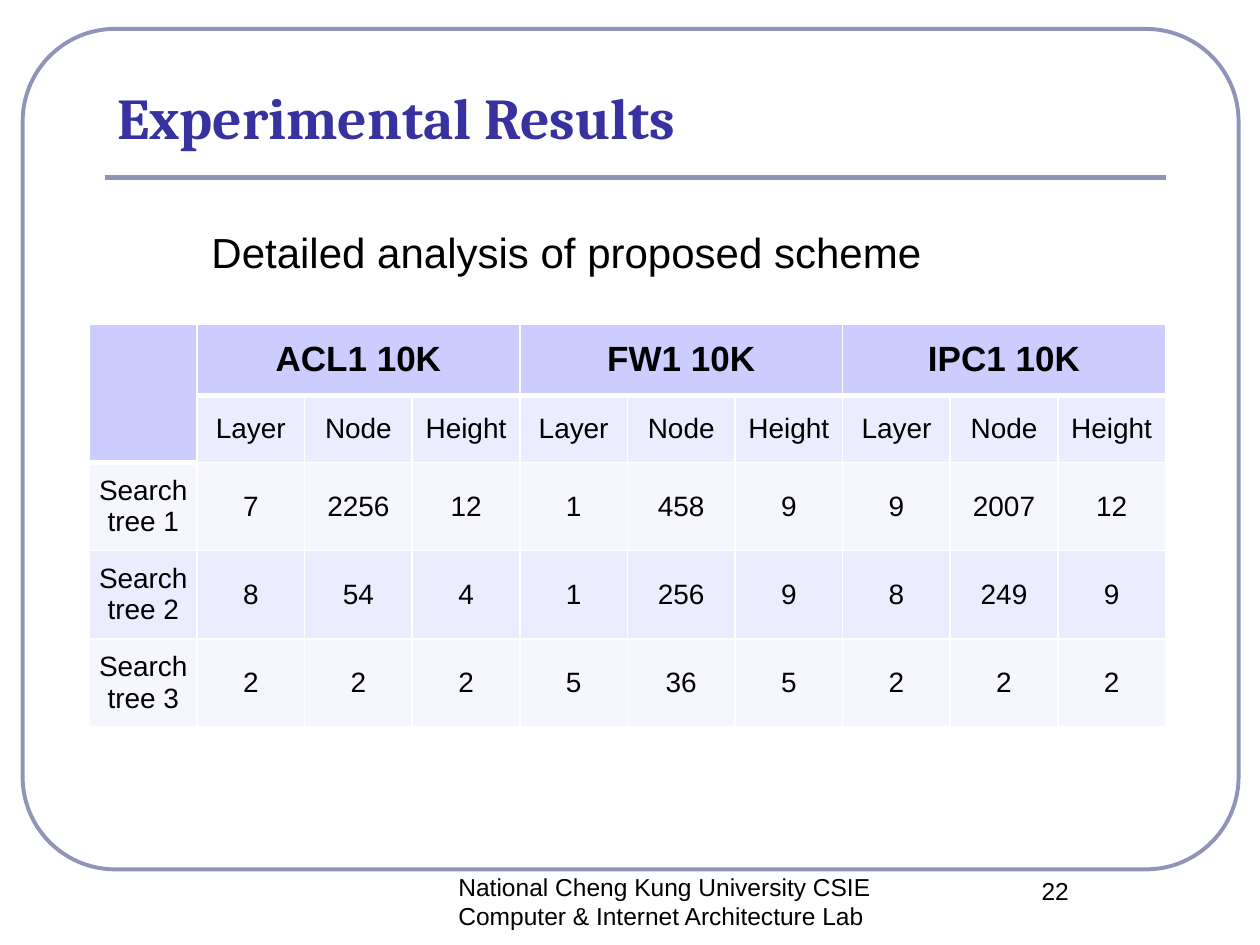
import lxml.etree
import pptx
import pptx.dml.color
import pptx.enum.shapes
import pptx.enum.text
import pptx.oxml.ns
import pptx.util
from pptx.util import Inches, Pt

COLORS = {
    "frame": "9094B8", "title": "3732A0", "text": "000000", "border": "FFFFFF",
    "header": "CCCCFF", "dark band": "ECECFF", "light band": "F6F6FF",
}
TITLE = "Experimental Results"
TEXTS = [  # text, left, top, width, height, size, centred
    ("National Cheng Kung University CSIE Computer & Internet Architecture Lab ",
     3.11, 6.87, 4.33, 0.5, 14, True),
    ("22", 7.5, 6.9, 1.75, 0.5, 14, True),
    ("Detailed analysis of proposed scheme", 1.58, 1.75, 5.92, 0.55, 24, False),
]
RULE_SETS = ["ACL1 10K", "FW1 10K", "IPC1 10K"]
MEASURES = ["Layer", "Node", "Height"]
TREES = [
    ("Search tree 1", 7, 2256, 12, 1, 458, 9, 9, 2007, 12),
    ("Search tree 2", 8, 54, 4, 1, 256, 9, 8, 249, 9),
    ("Search tree 3", 2, 2, 2, 5, 36, 5, 2, 2, 2),
]
TABLE_LEFT, TABLE_TOP, TABLE_WIDTH = 0.71, 2.57, 8.54
ROW_HEIGHTS = [0.57, 0.53, 0.7, 0.7, 0.7]
CENTER = pptx.enum.text.PP_ALIGN.CENTER
LEFT = pptx.enum.text.PP_ALIGN.LEFT


def color(name):
    return pptx.dml.color.RGBColor.from_string(COLORS[name])


def style_paragraph(para, size, align, font="Arial", color_name="text", bold=False):
    para.alignment = align
    para.font.name = font
    para.font.size = Pt(size)
    para.font.bold = bold
    para.font.color.rgb = color(color_name)


def add_frame(slide):
    frame = slide.shapes.add_shape(
        pptx.enum.shapes.MSO_SHAPE.ROUNDED_RECTANGLE,
        Inches(0.18), Inches(0.23), Inches(9.65), Inches(6.67))
    frame.adjustments[0] = 0.11
    frame.shadow.inherit = False
    frame.fill.background()
    frame.line.color.rgb = color("frame")
    frame.line.width = Pt(2.25)

    rule = slide.shapes.add_connector(
        pptx.enum.shapes.MSO_CONNECTOR.STRAIGHT,
        Inches(0.83), Inches(1.41), Inches(9.25), Inches(1.41))
    rule.line.color.rgb = color("frame")
    rule.line.width = Pt(3)
    lxml.etree.SubElement(rule.element.spPr, pptx.oxml.ns.qn("a:effectLst"))


def add_title(slide):
    title = slide.shapes.title
    title.left, title.top = Inches(0.83), Inches(0.6)
    title.width, title.height = Inches(8.42), Inches(0.65)
    title.text_frame.text = TITLE
    title.text_frame.auto_size = pptx.enum.text.MSO_AUTO_SIZE.NONE
    title.text_frame.vertical_anchor = pptx.enum.text.MSO_ANCHOR.BOTTOM
    style_paragraph(title.text_frame.paragraphs[0], 33, LEFT, "Cambria", "title", True)


def add_text(slide, text, left, top, width, height, size, centred):
    box = slide.shapes.add_textbox(
        Inches(left), Inches(top), Inches(width), Inches(height))
    box.text_frame.word_wrap = True
    box.text_frame.text = text
    style_paragraph(box.text_frame.paragraphs[0], size, CENTER if centred else LEFT)


def set_borders(cell, bottom_width):
    """Draw the cell's edges; call before the fill, which must follow them in the XML."""
    qn = pptx.oxml.ns.qn
    properties = cell._tc.get_or_add_tcPr()
    for side, width in (("L", 1), ("R", 1), ("T", 1), ("B", bottom_width)):
        line = lxml.etree.SubElement(properties, qn(f"a:ln{side}"), w=str(Pt(width)))
        fill = lxml.etree.SubElement(line, qn("a:solidFill"))
        lxml.etree.SubElement(fill, qn("a:srgbClr"), val=COLORS["border"])


def add_results(slide):
    header = [""]
    for rule_set in RULE_SETS:
        header += [rule_set] + [""] * (len(MEASURES) - 1)
    rows = [header, [""] + MEASURES * len(RULE_SETS), *TREES]
    table = slide.shapes.add_table(
        len(rows), len(header), Inches(TABLE_LEFT), Inches(TABLE_TOP),
        Inches(TABLE_WIDTH), Inches(sum(ROW_HEIGHTS))).table
    for column in table.columns:
        column.width = Inches(TABLE_WIDTH / len(header))
    for row, height in zip(table.rows, ROW_HEIGHTS):
        row.height = Inches(height)

    for row_index, values in enumerate(rows):
        for column_index, value in enumerate(values):
            cell = table.cell(row_index, column_index)
            is_header = row_index == 0 or (row_index == 1 and column_index == 0)
            band = "dark band" if row_index % 2 else "light band"
            set_borders(cell, 3 if is_header else 1)
            cell.fill.solid()
            cell.fill.fore_color.rgb = color("header" if is_header else band)
            cell.vertical_anchor = pptx.enum.text.MSO_ANCHOR.MIDDLE
            if not is_header:
                cell.margin_left = cell.margin_right = 0
                cell.margin_top = cell.margin_bottom = 0
            cell.text = str(value)
            style_paragraph(cell.text_frame.paragraphs[0],
                            20 if is_header else 16, CENTER, bold=is_header)

    table.cell(0, 0).merge(table.cell(1, 0))
    for first in range(1, len(header), len(MEASURES)):
        table.cell(0, first).merge(table.cell(0, first + len(MEASURES) - 1))


def main():
    deck = pptx.Presentation()
    deck.slide_width, deck.slide_height = Inches(10), Inches(7.5)
    slide = deck.slides.add_slide(deck.slide_layouts.get_by_name("Title Only"))
    add_frame(slide)
    add_title(slide)
    add_results(slide)
    for entry in TEXTS:
        add_text(slide, *entry)
    deck.save("out.pptx")


if __name__ == "__main__":
    main()
